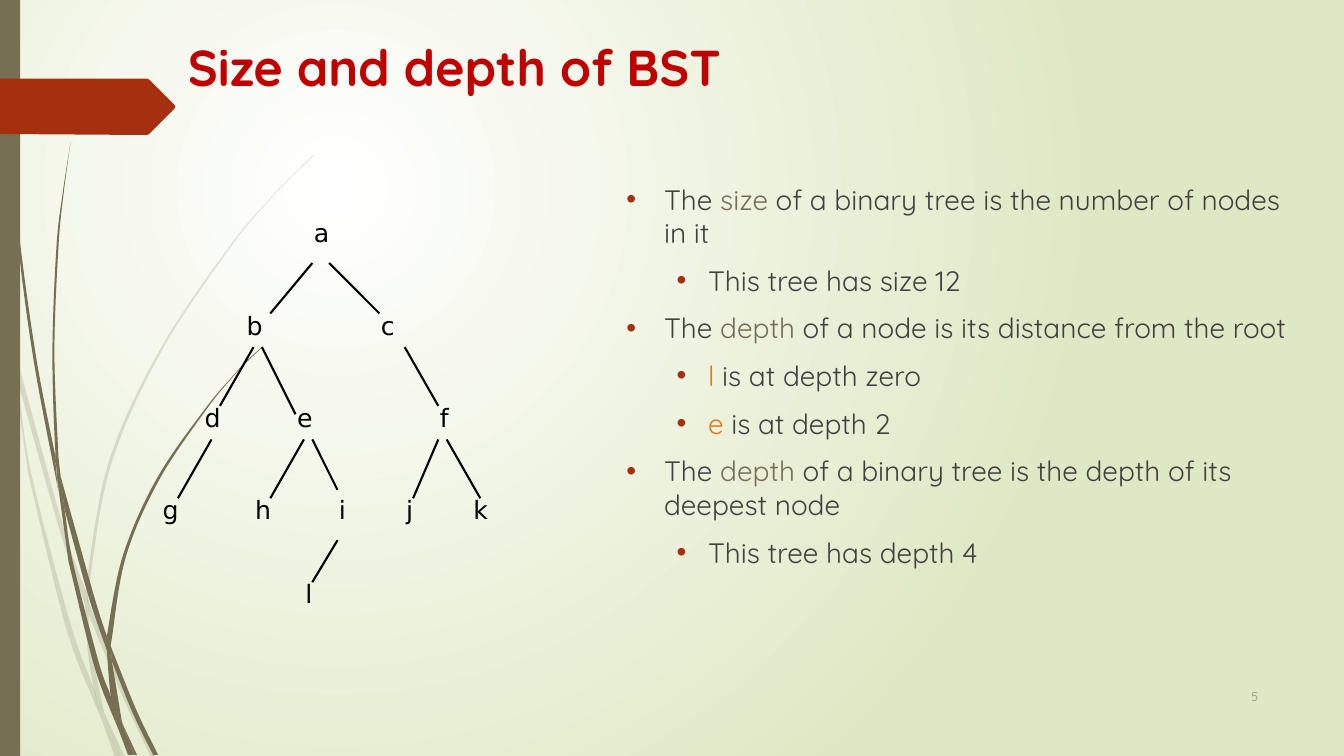
from dataclasses import dataclass

from lxml.etree import SubElement
from pptx import Presentation
from pptx.dml.color import RGBColor
from pptx.enum.shapes import MSO_CONNECTOR, MSO_SHAPE
from pptx.enum.text import MSO_ANCHOR, MSO_AUTO_SIZE, PP_ALIGN
from pptx.oxml.ns import qn
from pptx.util import Cm, Pt


@dataclass(frozen=True)
class Theme:
    font: str = "Quicksand"
    node_font: str = "DejaVu Sans"
    title: str = "C00000"
    text: str = "404040"
    olive: str = "766F54"
    rust: str = "A53010"
    orange: str = "DE7E18"
    muted: str = "8C8C8C"
    black: str = "000000"
    glow: str = "FFFFFF"
    backdrop: str = "DFE8C4"
    title_size: int = 36
    body_size: int = 20
    node_size: int = 18
    number_size: int = 9


THEME = Theme()

# Each blade piece is two sides, in hundredths of an inch.
HUNDREDTH = Cm(2.54) / 100
PALE_GRASS = [
    ([(11, 350), (9, 322), (0, 282)], [(0, 299), (10, 344)]),
    ([(14, 345), (62, 520), (85, 586)], [(84, 599), (58, 522), (17, 376)]),
    ([(88, 596), (92, 607), (127, 692), (155, 751)], [(150, 751), (123, 694), (88, 610)]),
    ([(105, 711), (124, 751)], [(119, 751)]),
    ([(11, 350), (17, 376), (31, 469), (70, 619), (93, 683), (99, 707), (101, 714)],
     [(92, 693), (65, 621), (28, 470)]),
    ([(84, 599), (87, 646), (93, 683), (96, 692), (105, 711)],
     [(103, 706), (91, 646), (88, 610), (88, 608)]),
    ([(85, 586), (85, 584), (107, 461), (158, 348), (228, 244), (268, 197), (289, 175), (312, 153)],
     [(312, 154), (290, 175), (268, 198), (229, 245), (160, 349), (110, 462), (88, 584), (88, 596)]),
    ([(101, 714), (114, 751)], [(119, 751)]),
    ([(85, 586), (88, 596), (88, 610)], [(88, 608), (84, 599)]),
    ([(93, 683), (96, 692), (105, 711), (119, 751)], [(101, 714), (99, 707)]),
]
DARK_GRASS = [
    ([(3, 0), (4, 48), (7, 110), (17, 233), (33, 355), (56, 477), (57, 481)],
     [(55, 457), (55, 453), (36, 355), (19, 232), (8, 109), (5, 48), (4, 0)]),
    ([(60, 472), (93, 590), (106, 631)], [(106, 645), (88, 592), (64, 505)]),
    ([(110, 641), (113, 649), (136, 706), (157, 749)], [(152, 749), (132, 708), (111, 656)]),
    ([(57, 477), (64, 505), (72, 556), (98, 657), (110, 691), (116, 717), (117, 722)],
     [(111, 708), (93, 659), (68, 557)]),
    ([(70, 141), (62, 193), (56, 245), (52, 349), (55, 449), (60, 472)],
     [(58, 453), (54, 349), (58, 245), (63, 193), (70, 141)]),
    ([(122, 719), (136, 749)], [(133, 749)]),
    ([(55, 449), (60, 472), (64, 505)], [(57, 477), (55, 453)]),
    ([(260, 344), (245, 358), (231, 373), (204, 405), (156, 474), (122, 551), (106, 631)],
     [(110, 641), (111, 633), (125, 552), (158, 476), (205, 406), (231, 374), (245, 359), (261, 344)]),
    ([(117, 722), (127, 749)], [(131, 749)]),
    ([(106, 645), (110, 691), (116, 706), (122, 719)], [(121, 716), (111, 656), (109, 651)]),
    ([(106, 631), (110, 641), (111, 656)], [(109, 651), (106, 645)]),
    ([(110, 691), (116, 706), (122, 719), (133, 749)], [(130, 749), (117, 722), (116, 717)]),
]
RIBBON = [(0, 78), (146, 78), (148, 79), (173, 104), (174, 106), (173, 108), (148, 133), (146, 134), (0, 133)]

# The tree is laid out on a square grid of small steps.
TREE_LEFT, TREE_TOP, STEP = Cm(3.85), Cm(5.36), Cm(9.1) / 43
NODE_ROWS = {
    0: {"a": 18},
    11: {"b": 10, "c": 26},
    22: {"d": 5, "e": 16, "f": 33},
    33: {"g": 0, "h": 11, "i": 21, "j": 29, "k": 37},
    43: {"l": 17},
}
BRANCHES = [
    (19, 6, 14, 12), (21, 6, 27, 12), (12, 16, 8, 23), (13, 16, 17, 24),
    (30, 16, 34, 23), (7, 27, 3, 34), (18, 27, 14, 34), (19, 27, 22, 33),
    (22, 39, 19, 44), (34, 27, 31, 34), (35, 27, 39, 34),
]

POINTS = [
    (0, [("The ", THEME.text), ("size", THEME.olive),
         (" of a binary tree is the number of nodes in it", THEME.text)]),
    (1, [("This tree has size 12", THEME.text)]),
    (0, [("The ", THEME.text), ("depth", THEME.olive),
         (" of a node is its distance from the root", THEME.text)]),
    (1, [("l ", THEME.orange), ("is at depth zero", THEME.text)]),
    (1, [("e", THEME.orange), (" is at depth 2", THEME.text)]),
    (0, [("The ", THEME.text), ("depth", THEME.olive),
         (" of a binary tree is the depth of its deepest node", THEME.text)]),
    (1, [("This tree has depth 4", THEME.text)]),
]
INDENTS = [(Cm(0.95), Cm(0.95)), (Cm(2.06), Cm(0.79))]


class SlideBuilder:
    def __init__(self, slide, theme):
        self.slide, self.theme = slide, theme
        self.shapes = slide.shapes

    def open_group(self):
        self.shapes = self.slide.shapes.add_group_shape().shapes

    def close_group(self):
        self.shapes = self.slide.shapes

    def move_to_layout(self):
        """Make everything drawn so far, except placeholders, part of the layout."""
        tree = self.slide.slide_layout.element.cSld.spTree
        for shape in list(self.slide.shapes):
            if not shape.is_placeholder:
                tree.append(shape.element)

    def backdrop(self):
        fill = self.slide.background.fill
        fill.gradient()
        colours = (self.theme.glow, self.theme.backdrop)
        for stop, position, colour in zip(fill.gradient_stops, (0, 1), colours):
            stop.position = position
            stop.color.rgb = RGBColor.from_string(colour)
        gradient = self.slide.element.find(".//" + qn("a:gradFill"))
        gradient.remove(gradient.find(qn("a:lin")))
        circle = SubElement(gradient, qn("a:path"), path="circle")
        SubElement(circle, qn("a:fillToRect"), l="50000", t="50000", r="100000", b="100000")

    def paint(self, shape, colour, opacity=100):
        shape.shadow.inherit = False
        shape.line.fill.background()
        shape.fill.solid()
        shape.fill.fore_color.rgb = RGBColor.from_string(colour)
        if opacity < 100:
            tint = shape.element.spPr.find(".//" + qn("a:srgbClr"))
            SubElement(tint, qn("a:alpha"), val=str(opacity * 1000))

    def outline(self, points, colour, opacity=100):
        start, *rest = [(round(x * HUNDREDTH), round(y * HUNDREDTH)) for x, y in points]
        builder = self.shapes.build_freeform(*start)
        builder.add_line_segments(rest, close=True)
        shape = builder.convert_to_shape()
        self.paint(shape, colour, opacity)
        return shape

    def blade(self, there, back, opacity):
        """Draw an outline whose two sides are bent into smooth cubic curves."""
        shape = self.outline(there + back, self.theme.olive, opacity)
        spots = list(shape.element.spPr.iter(qn("a:pt")))
        places = [(int(spot.get("x")), int(spot.get("y"))) for spot in spots]
        for first, last in ((0, len(there) - 1), (len(there), len(spots) - 1)):
            for i in range(first, last):
                p0, p1 = places[max(i - 1, first)], places[i]
                p2, p3 = places[i + 1], places[min(i + 2, last)]
                segment = spots[i + 1].getparent()
                curve = segment.makeelement(qn("a:cubicBezTo"))
                leave = [b + (c - a) / 6 for a, b, c in zip(p0, p1, p2)]
                arrive = [c - (d - b) / 6 for b, c, d in zip(p1, p2, p3)]
                for x, y in (leave, arrive, p2):
                    SubElement(curve, qn("a:pt"), x=str(round(x)), y=str(round(y)))
                segment.getparent().replace(segment, curve)

    def bar(self, *box):
        self.paint(self.shapes.add_shape(MSO_SHAPE.RECTANGLE, *box), self.theme.olive)

    def style(self, paragraph, size, colour=None, font=None, bold=False):
        paragraph.font.name = font or self.theme.font
        paragraph.font.size = Pt(size)
        paragraph.font.bold = bold
        if colour:
            paragraph.font.color.rgb = RGBColor.from_string(colour)

    def label(self, text, box, size, colour, font=None, align=PP_ALIGN.LEFT, anchor=MSO_ANCHOR.TOP):
        frame = self.shapes.add_textbox(*box).text_frame
        frame.word_wrap = True
        frame.vertical_anchor = anchor
        paragraph = frame.paragraphs[0]
        paragraph.text = text
        paragraph.alignment = align
        self.style(paragraph, size, colour, font)

    def branch(self, *ends):
        line = self.shapes.add_connector(MSO_CONNECTOR.STRAIGHT, *ends)
        line.line.color.rgb = RGBColor.from_string(self.theme.black)
        line.line.width = Pt(1.5)
        SubElement(line.element.spPr, qn("a:effectLst"))

    def place(self, holder, box):
        holder.left, holder.top, holder.width, holder.height = box
        frame = holder.text_frame
        frame.auto_size = MSO_AUTO_SIZE.NONE
        frame.vertical_anchor = MSO_ANCHOR.TOP
        return frame

    def title(self, text, box):
        heading = self.place(self.slide.shapes.title, box).paragraphs[0]
        heading.text = text
        heading.alignment = PP_ALIGN.LEFT
        self.style(heading, self.theme.title_size, self.theme.title, bold=True)

    def bullets(self, points, box):
        frame = self.place(self.slide.placeholders[1], box)
        for index, (level, pieces) in enumerate(points):
            point = frame.add_paragraph() if index else frame.paragraphs[0]
            point.level = level
            properties = point._p.get_or_add_pPr()
            margin, hanging = INDENTS[level]
            properties.set("marL", str(margin))
            properties.set("indent", str(-hanging))
            SubElement(SubElement(properties, qn("a:buClr")), qn("a:srgbClr"), val=self.theme.rust)
            SubElement(properties, qn("a:buFont"), typeface="Arial")
            SubElement(properties, qn("a:buChar"), char="•")
            point.space_before = Pt(10)
            self.style(point, self.theme.body_size)
            for text, colour in pieces:
                run = point.add_run()
                run.text = text
                run.font.color.rgb = RGBColor.from_string(colour)


def on_grid(column, row):
    return round(TREE_LEFT + column * STEP), round(TREE_TOP + row * STEP)


def main():
    deck = Presentation()
    deck.slide_width, deck.slide_height = Cm(33.87), Cm(19.05)
    page = SlideBuilder(deck.slides.add_slide(deck.slide_layouts[1]), THEME)
    page.backdrop()
    for grass, opacity in ((PALE_GRASS, 20), (DARK_GRASS, 100)):
        page.open_group()
        for there, back in grass:
            page.blade(there, back, opacity)
        page.close_group()
    page.bar(0, 0, Cm(0.51), deck.slide_height)
    page.outline(RIBBON, THEME.rust)
    page.move_to_layout()

    page.title("Size and depth of BST", (Cm(4.48), Cm(0.79), Cm(24.77), Cm(3.56)))
    page.bullets(POINTS, (Cm(15.53), Cm(4.46), Cm(17.37), Cm(13.23)))
    page.label("5", (Cm(28.78), Cm(17.02), Cm(3.18), Cm(1.04)), THEME.number_size,
               THEME.muted, align=PP_ALIGN.RIGHT, anchor=MSO_ANCHOR.MIDDLE)
    page.open_group()
    for row, nodes in NODE_ROWS.items():
        for node, column in nodes.items():
            page.label(node, (*on_grid(column, row), Cm(1.07), Cm(1.02)),
                       THEME.node_size, THEME.black, THEME.node_font)
    for x1, y1, x2, y2 in BRANCHES:
        page.branch(*on_grid(x1, y1), *on_grid(x2, y2))
    deck.save("out.pptx")


if __name__ == "__main__":
    main()
